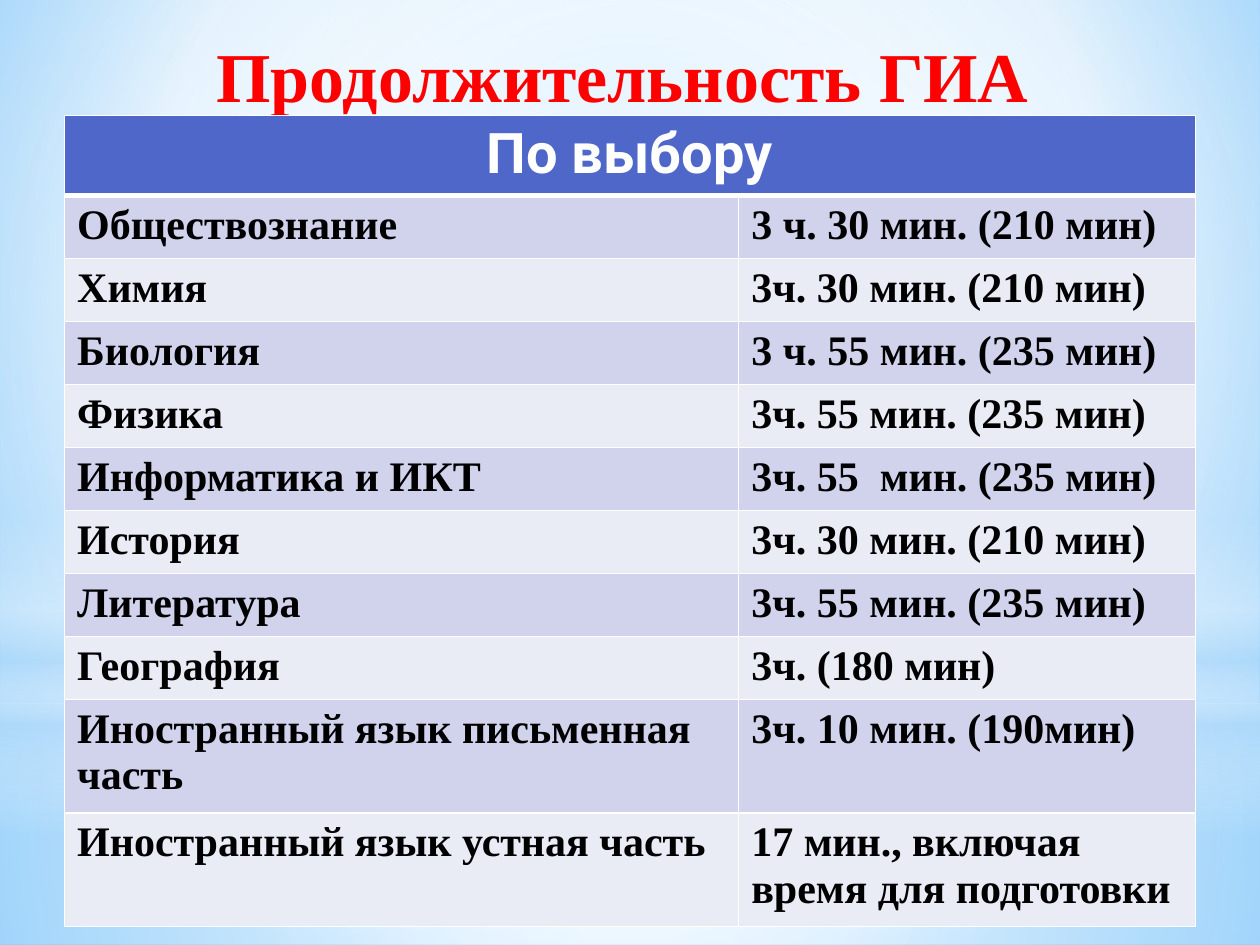
from pptx import Presentation
from pptx.dml.color import RGBColor
from pptx.enum.shapes import MSO_SHAPE as SHAPE
from pptx.enum.text import PP_ALIGN as ALIGN
from pptx.oxml import parse_xml
from pptx.oxml.ns import nsdecls
from pptx.util import Pt

TITLE = "Продолжительность ГИА"
HEADER = "По выбору"
EXAMS = [
    ("Обществознание", "3 ч. 30 мин. (210 мин)"),
    ("Химия", "3ч. 30 мин. (210 мин)"),
    ("Биология", "3 ч. 55 мин. (235 мин)"),
    ("Физика", "3ч. 55 мин. (235 мин)"),
    ("Информатика и ИКТ", "3ч. 55  мин. (235 мин)"),
    ("История", "3ч. 30 мин. (210 мин)"),
    ("Литература", "3ч. 55 мин. (235 мин)"),
    ("География", "3ч. (180 мин)"),
    ("Иностранный язык письменная часть", "3ч. 10 мин. (190мин)"),
    ("Иностранный язык устная часть", "17 мин., включая время для подготовки"),
]
COL_WIDTHS = [385.2, 261]
ROW_HEIGHTS = [44] + [35.15] * 8 + [63.4] * 2
BANDS = ["D0D3EB", "E9EBF5"]
SERIF = "Times New Roman"

# Gradient stops: position %, colour, opacity %
BACKDROP = [(0, "9ED5FF", 100), (60, "FFFFFF", 100), (100, "5BB9FF", 100)]
CENTRE = (50, 50, 50, 50)
GLOWS = [  # shape, box, stops, focus of a radial gradient (None: vertical)
    (SHAPE.RECTANGLE, (0, 401.8, 720, 138.2),
     [(0, "FFFFFF", 91), (37, "FFFFFF", 76), (100, "B4DCFA", 79)], CENTRE),
    (SHAPE.RECTANGLE, (0, 0, 720, 401.8),
     [(0, "FFFFFF", 89), (48, "FFFFFF", 62), (100, "B4DCFA", 79)], CENTRE),
    (SHAPE.RECTANGLE, (0, 296.6, 720, 180),
     [(0, "FFFFFF", 0), (29, "FFFFFF", 30), (45, "B4DCFA", 40),
      (55, "FFFFFF", 26), (65, "B4DCFA", 60), (100, "FFFFFF", 0)], None),
    (SHAPE.OVAL, (0, 126, 720, 401.8),
     [(0, "FFFFFF", 100), (56, "FFFFFF", 0)], CENTRE),
]


def rgb(value):
    return RGBColor.from_string(value)


def set_gradient(fill, element, stops, focus):
    """Replace the fill inside element by a radial or vertical gradient."""
    fill.gradient()
    old = element.xpath(".//a:gradFill")[0]
    gs = "".join(
        f'<a:gs pos="{pos * 1000}"><a:srgbClr val="{color}">'
        f'<a:alpha val="{alpha * 1000}"/></a:srgbClr></a:gs>'
        for pos, color, alpha in stops)
    if focus:
        sides = " ".join(f'{k}="{v * 1000}"' for k, v in zip("ltrb", focus))
        shade = f'<a:path path="circle"><a:fillToRect {sides}/></a:path>'
    else:
        shade = '<a:lin ang="5400000" scaled="0"/>'
    old.getparent().replace(old, parse_xml(
        f'<a:gradFill {nsdecls("a")} rotWithShape="1">'
        f'<a:gsLst>{gs}</a:gsLst>{shade}</a:gradFill>'))


def style(p, text, font, size, color, align=ALIGN.LEFT):
    p.text = text
    p.alignment = align
    p.font.name, p.font.size, p.font.bold = font, Pt(size), True
    p.font.color.rgb = rgb(color)


def paint_cell(cell, color, bottom=1):
    """Fill a cell and give it white borders."""
    tc_pr = cell._tc.get_or_add_tcPr()
    for side, width in zip("LRTB", (1, 1, 1, bottom)):
        tc_pr.append(parse_xml(
            f'<a:ln{side} {nsdecls("a")} w="{Pt(width)}"><a:solidFill>'
            f'<a:srgbClr val="FFFFFF"/></a:solidFill></a:ln{side}>'))
    cell.fill.solid()
    cell.fill.fore_color.rgb = rgb(color)


prs = Presentation()
prs.slide_width, prs.slide_height = Pt(720), Pt(540)
s = prs.slides.add_slide(prs.slide_layouts[6])

set_gradient(s.background.fill, s.element, BACKDROP, (20, 10, 20, 60))
for kind, box, stops, focus in GLOWS:
    sp = s.shapes.add_shape(kind, *map(Pt, box))
    sp.shadow.inherit = False
    sp.line.fill.background()
    set_gradient(sp.fill, sp.element, stops, focus)

tf = s.shapes.add_textbox(Pt(25.2), Pt(15.1), Pt(657.4), Pt(305.3)).text_frame
tf.word_wrap = True
p = tf.paragraphs[0]
style(p, TITLE, SERIF, 40, "FF0000", ALIGN.CENTER)
p.space_before, p.space_after = Pt(5), Pt(3)
p._p.get_or_add_pPr().set("marL", str(Pt(3.6)))

table = s.shapes.add_table(
    len(ROW_HEIGHTS), len(COL_WIDTHS), Pt(36.9), Pt(66),
    Pt(sum(COL_WIDTHS)), Pt(sum(ROW_HEIGHTS))).table
for col, width in zip(table.columns, COL_WIDTHS):
    col.width = Pt(width)
for row, height in zip(table.rows, ROW_HEIGHTS):
    row.height = Pt(height)

header = table.cell(0, 0)
header.merge(table.cell(0, 1))
style(header.text_frame.paragraphs[0], HEADER, "Roboto", 32, "FFFFFF",
      ALIGN.CENTER)
for c in range(len(COL_WIDTHS)):
    paint_cell(table.cell(0, c), "4E67C8", bottom=3)
for r, exam in enumerate(EXAMS, 1):
    for c, text in enumerate(exam):
        cell = table.cell(r, c)
        style(cell.text_frame.paragraphs[0], text, SERIF, 24, "000000")
        paint_cell(cell, BANDS[(r - 1) % 2])

prs.save("out.pptx")
